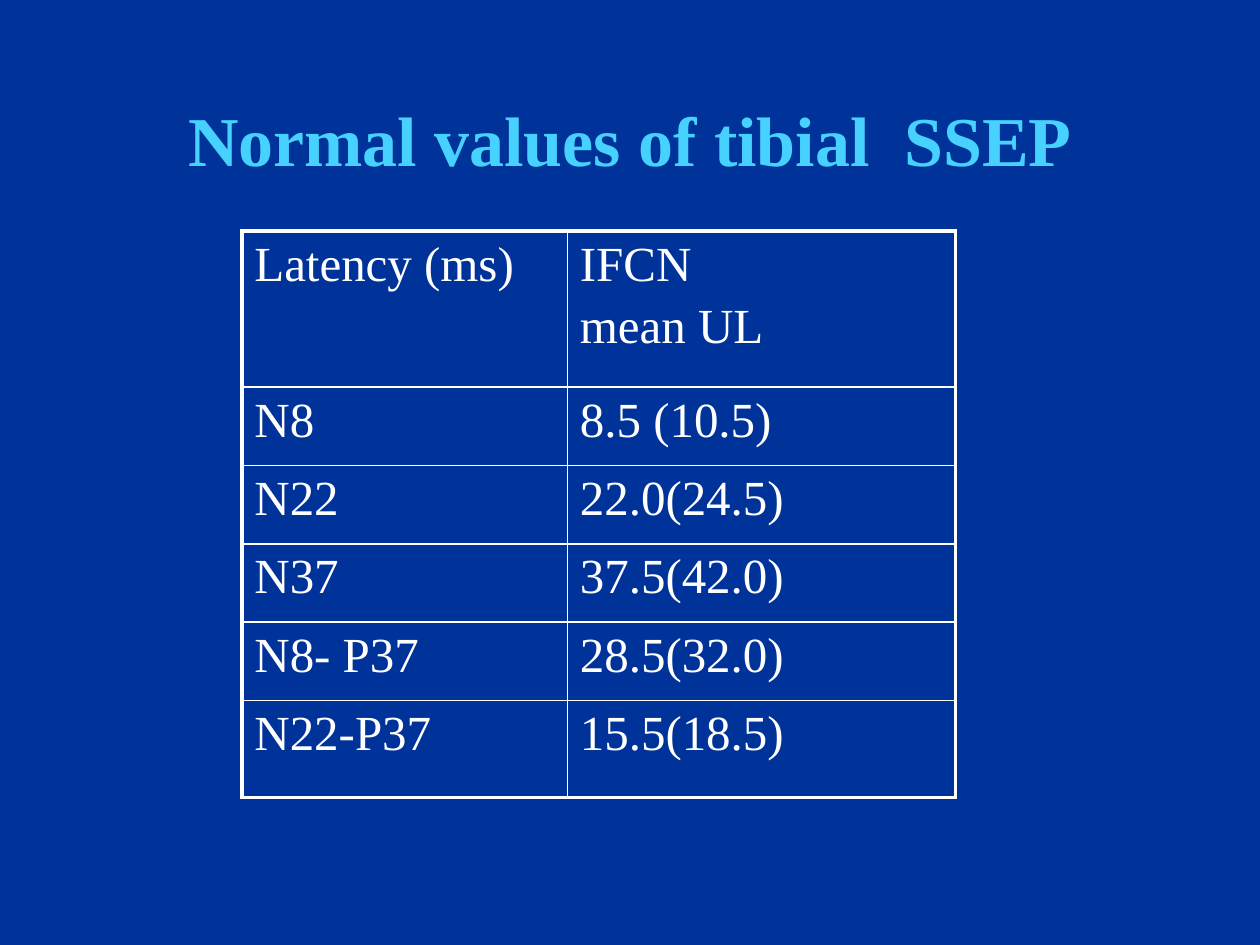
from lxml import etree
from pptx import Presentation
from pptx.dml.color import RGBColor
from pptx.enum.text import MSO_ANCHOR, MSO_AUTO_SIZE, PP_ALIGN
from pptx.oxml.ns import qn
from pptx.util import Pt

NAVY = RGBColor(0x00, 0x33, 0x99)
SKY = RGBColor(0x47, 0xD1, 0xFF)
WHITE = RGBColor(0xFF, 0xFF, 0xFF)
CENTER = PP_ALIGN.CENTER
MIDDLE = MSO_ANCHOR.MIDDLE
NO_AUTOFIT = MSO_AUTO_SIZE.NONE
FONT = "Times New Roman"
OUTER, INNER = 2.25, 1

LATENCIES = [
    ("Latency (ms)", "IFCN\nmean UL"),
    ("N8", "8.5 (10.5)"),
    ("N22", "22.0(24.5)"),
    ("N37", "37.5(42.0)"),
    ("N8- P37", "28.5(32.0)"),
    ("N22-P37", "15.5(18.5)"),
]
COLUMN_WIDTHS = [186, 222]
ROW_HEIGHTS = [89.2] + [44.8] * 4 + [55.4]


def format_runs(paragraph, size, color, bold=False):
    for run in paragraph.runs:
        run.font.name = FONT
        run.font.size = Pt(size)
        run.font.bold = bold
        run.font.color.rgb = color


def add_title(slide, wording):
    title = slide.shapes.title
    title.left, title.top, title.width, title.height = Pt(36), Pt(72), Pt(648), Pt(14.4)
    frame = title.text_frame
    frame.text = wording
    frame.auto_size = NO_AUTOFIT
    frame.vertical_anchor = MIDDLE
    frame.paragraphs[0].alignment = CENTER
    format_runs(frame.paragraphs[0], 40, SKY, bold=True)


def set_border(cell, side, weight):
    properties = cell._tc.get_or_add_tcPr()
    line = etree.SubElement(properties, qn(f"a:ln{side}"), w=str(Pt(weight)))
    fill = etree.SubElement(line, qn("a:solidFill"))
    etree.SubElement(fill, qn("a:srgbClr"), val=str(WHITE))


def fill_cell(cell, wording, edges):
    cell.text_frame.text = wording
    for index, paragraph in enumerate(cell.text_frame.paragraphs):
        paragraph.space_before = Pt(4.5 if index else 0)
        format_runs(paragraph, 28, WHITE)
    for side, is_outer in edges.items():
        set_border(cell, side, OUTER if is_outer else INNER)
    cell.fill.background()


def add_latency_table(slide):
    rows, columns = len(LATENCIES), len(COLUMN_WIDTHS)
    table = slide.shapes.add_table(
        rows, columns, Pt(138.2), Pt(132),
        Pt(sum(COLUMN_WIDTHS)), Pt(sum(ROW_HEIGHTS)),
    ).table
    table.first_row = False
    table.horz_banding = False
    for column, width in zip(table.columns, COLUMN_WIDTHS):
        column.width = Pt(width)
    for row, height in zip(table.rows, ROW_HEIGHTS):
        row.height = Pt(height)
    for r, entries in enumerate(LATENCIES):
        for c, wording in enumerate(entries):
            edges = {"L": c == 0, "R": c == columns - 1,
                     "T": r == 0, "B": r == rows - 1}
            fill_cell(table.cell(r, c), wording, edges)


def main():
    deck = Presentation()
    deck.slide_width, deck.slide_height = Pt(720), Pt(540)
    slide = deck.slides.add_slide(deck.slide_layouts[5])
    slide.background.fill.solid()
    slide.background.fill.fore_color.rgb = NAVY
    add_title(slide, "Normal values of tibial  SSEP")
    add_latency_table(slide)
    deck.save("out.pptx")


if __name__ == "__main__":
    main()
